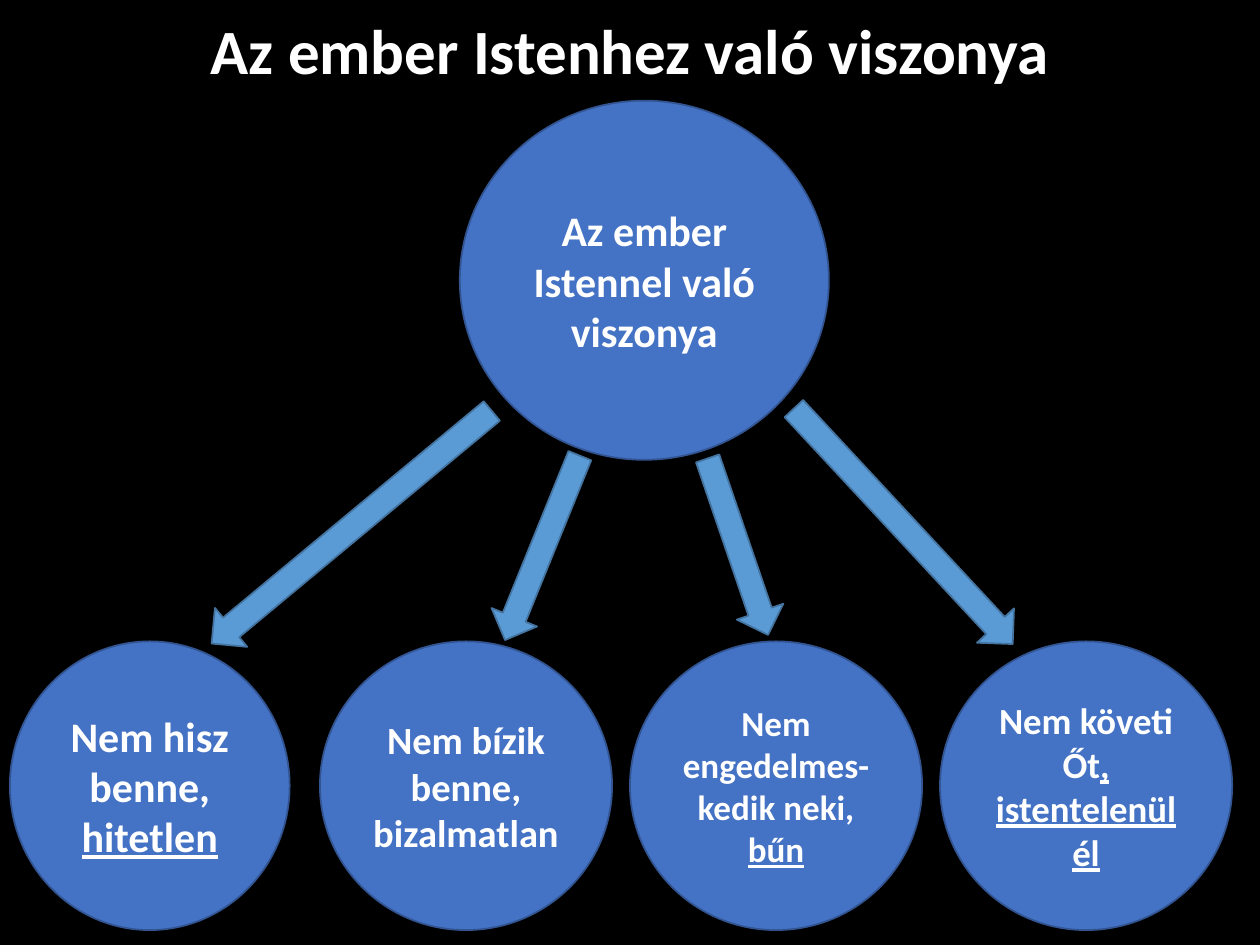
from pptx import Presentation
from pptx import util as u
from pptx.dml.color import RGBColor
from pptx.enum import shapes, text


def color(hex_value):
    return RGBColor.from_string(hex_value)


class Deck:
    """Holds the style and the current slide."""
    FONT = {"name": "Calibri", "bold": True}
    TEXT = "FFFFFF"
    CIRCLE = ("4472C4", "325491")
    ARROW = ("5B9BD5", "43739E")
    CIRCLE_FRAME = {"word_wrap": True, "vertical_anchor": text.MSO_ANCHOR.MIDDLE,
                    "margin_left": u.Cm(0.19), "margin_right": u.Cm(0.19),
                    "margin_top": u.Cm(0.1), "margin_bottom": u.Cm(0.1)}
    TITLE_FRAME = {"word_wrap": True, "vertical_anchor": text.MSO_ANCHOR.TOP,
                   "auto_size": text.MSO_AUTO_SIZE.NONE}

    def __init__(self, background):
        self.prs = Presentation()
        self.prs.slide_width, self.prs.slide_height = u.Cm(25.4), u.Cm(19.05)
        self.slide = self.prs.slides.add_slide(self.prs.slide_layouts[5])
        fill = self.slide.background.fill
        fill.solid()
        fill.fore_color.rgb = color(background)

    @staticmethod
    def apply(target, values):
        for name, value in values.items():
            setattr(target, name, value)

    def add_text(self, frame, paragraphs, size, frame_format):
        """Each paragraph is a list of (wording, underlined) runs."""
        self.apply(frame, frame_format)
        for index, runs in enumerate(paragraphs):
            paragraph = frame.add_paragraph() if index else frame.paragraphs[0]
            paragraph.alignment = text.PP_ALIGN.CENTER
            for wording, underlined in runs:
                run = paragraph.add_run()
                run.text = wording
                self.apply(run.font, {**self.FONT, "size": u.Pt(size)})
                run.font.color.rgb = color(self.TEXT)
                if underlined:
                    run.font.underline = True

    def title(self, wording, box, size):
        heading = self.slide.shapes.title
        self.apply(heading, dict(zip(("left", "top", "width", "height"), map(u.Cm, box))))
        self.add_text(heading.text_frame, [[(wording, False)]], size, self.TITLE_FRAME)
        heading.text_frame.paragraphs[0].line_spacing = 0.9

    def preset(self, kind, box, colors):
        shape = self.slide.shapes.add_shape(kind, *map(u.Cm, box))
        shape.shadow.inherit = False
        shape.fill.solid()
        shape.fill.fore_color.rgb, shape.line.color.rgb = map(color, colors)
        shape.line.width = u.Pt(1)
        return shape

    def circle(self, box, paragraphs, size):
        shape = self.preset(shapes.MSO_SHAPE.OVAL, box, self.CIRCLE)
        self.add_text(shape.text_frame, paragraphs, size, self.CIRCLE_FRAME)

    def arrow(self, box, angle):
        self.preset(shapes.MSO_SHAPE.DOWN_ARROW, box, self.ARROW).rotation = angle


def main():
    deck = Deck("000000")
    deck.title("Az ember Istenhez való viszonya", (0, 0.28, 25.4, 3.45), 36)

    # Central idea
    deck.circle((9.27, 2.03, 7.44, 7.24),
                [[("Az ember", False)], [("Istennel való viszonya", False)]], 24)

    # Consequences, left to right: width, size, paragraphs
    consequences = [
        (5.64, 24, [[("Nem hisz benne,", False)], [("hitetlen", True)]]),
        (5.89, 22, [[("Nem bízik benne,", False)], [("bizalmatlan", False)]]),
        (5.89, 20, [[("Nem engedelmes-kedik neki,", False)], [("bűn", True)]]),
        (5.89, 21, [[("Nem követi Őt", False), (", istentelenül él", True)]]),
    ]
    for column, (width, size, paragraphs) in enumerate(consequences):
        deck.circle((0.2 + 6.25 * column, 12.93, width, 5.82), paragraphs, size)

    # Arrows from the central idea to each consequence
    for box, angle in [((6.58, 6.96, 1.02, 7.34), 50.3),
                       ((10.44, 9.04, 0.99, 4.01), 22.1),
                       ((14.38, 9.14, 0.99, 3.76), 341.1),
                       ((17.7, 7.37, 1.02, 6.48), 317.1)]:
        deck.arrow(box, angle)

    deck.prs.save("out.pptx")


if __name__ == "__main__":
    main()
